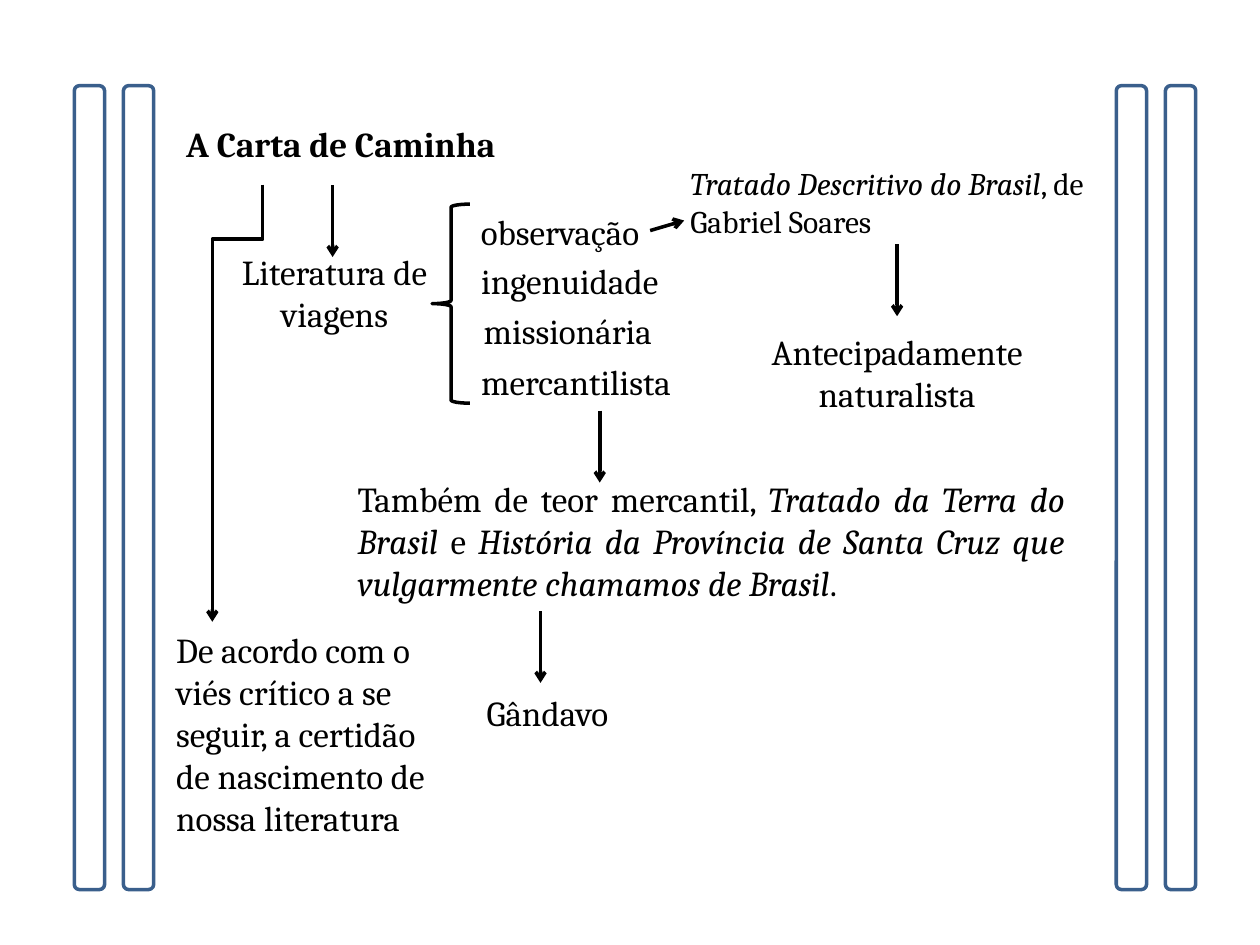
from dataclasses import dataclass

from lxml.etree import SubElement
from pptx import Presentation
from pptx.dml.color import RGBColor
from pptx.enum.shapes import MSO_CONNECTOR as Link, MSO_SHAPE as Preset
from pptx.enum.text import MSO_AUTO_SIZE as AutoSize, PP_ALIGN as Align
from pptx.oxml.ns import qn
from pptx.util import Pt

PX = 9144  # 100 px to the inch


@dataclass(frozen=True)
class Theme:
    font: str = "Cambria"
    ink: RGBColor = RGBColor(0, 0, 0)
    paper: RGBColor = RGBColor(255, 255, 255)
    pillar: RGBColor = RGBColor(0x3A, 0x5F, 0x8C)
    body: int = 20
    small: int = 18
    stroke: int = 2


class Diagram:
    def __init__(self, page, theme):
        self.shapes = page.shapes
        self.theme = theme

    def text(self, left, top, width, height, *spans, align=Align.LEFT,
             size=None, bold=False, wrap=True):
        """Add one paragraph; every second span is italic."""
        box = self.shapes.add_textbox(left * PX, top * PX, width * PX, height * PX)
        frame = box.text_frame
        frame.word_wrap = wrap
        frame.auto_size = AutoSize.SHAPE_TO_FIT_TEXT
        para = frame.paragraphs[0]
        para.alignment = align
        para.font.name = self.theme.font
        para.font.size = Pt(size or self.theme.body)
        para.font.color.rgb = self.theme.ink
        para.font.bold = bold
        for index, words in enumerate(spans):
            if words:
                span = para.add_run()
                span.text = words
                span.font.italic = index % 2 == 1

    def shape(self, preset, left, top, width, height, color, fill=None):
        shape = self.shapes.add_shape(preset, left * PX, top * PX, width * PX, height * PX)
        shape.shadow.inherit = False
        if fill is None:
            shape.fill.background()
        else:
            shape.fill.solid()
            shape.fill.fore_color.rgb = fill
        shape.line.color.rgb = color
        shape.line.width = Pt(self.theme.stroke)

    def arrow(self, x1, y1, x2, y2, kind=Link.STRAIGHT):
        link = self.shapes.add_connector(kind, x1 * PX, y1 * PX, x2 * PX, y2 * PX)
        link.line.color.rgb = self.theme.ink
        link.line.width = Pt(self.theme.stroke)
        properties = link._element.spPr
        SubElement(properties.find(qn("a:ln")), qn("a:tailEnd"), type="arrow")
        SubElement(properties, qn("a:effectLst"))
        return link

    def down_arrow(self, x, top, length=57):
        self.arrow(x, top, x, top + length)

    def elbow_down(self, x1, y1, x2, y2, bend):
        """Go down, left and down again; bend is the share of the first leg."""
        # Lay the connector on its side about its centre, then turn it a quarter
        run, drop = y2 - y1, x1 - x2
        left, top = (x1 + x2 - run) // 2, (y1 + y2 - drop) // 2
        link = self.arrow(left, top, left + run, top + drop, Link.ELBOW)
        properties = link._element.spPr
        properties.find(qn("a:xfrm")).set("rot", "5400000")
        geometry = properties.find(qn("a:prstGeom"))
        guides = geometry.find(qn("a:avLst"))
        if guides is None:
            guides = SubElement(geometry, qn("a:avLst"))
        SubElement(guides, qn("a:gd"), name="adj1", fmla=f"val {round(bend * 100000)}")


def main():
    deck = Presentation()
    deck.slide_width, deck.slide_height = 1000 * PX, 750 * PX
    page = deck.slides.add_slide(deck.slide_layouts[6])
    theme = Theme()
    diagram = Diagram(page, theme)

    # Pairs of pillars at both sides
    for pair_left in (59, 886):
        for offset in (0, 39):
            diagram.shape(Preset.ROUNDED_RECTANGLE, pair_left + offset, 68, 24, 638,
                          theme.pillar, theme.paper)

    # Title and its two branches
    diagram.text(138, 92, 307, 44, "A Carta de Caminha", bold=True, wrap=False)
    diagram.elbow_down(209, 147, 169, 494, bend=0.125)
    diagram.text(130, 494, 220, 212, "De acordo com o viés crítico a se seguir, "
                 "a certidão de nascimento de nossa literatura")
    diagram.down_arrow(264, 147)
    diagram.text(169, 194, 193, 77, "Literatura de viagens", align=Align.CENTER)

    # Traits of travel literature
    diagram.shape(Preset.LEFT_BRACE, 343, 162, 30, 158, theme.ink)
    traits = [
        ("observação", 356, 177, Align.CENTER),
        ("ingenuidade", 372, 181, Align.JUSTIFY),
        ("missionária", 374, 179, Align.LEFT),
        ("mercantilista", 372, 207, Align.JUSTIFY),
    ]
    for row, (trait, left, width, align) in enumerate(traits):
        diagram.text(left, 162 + row * 119 // 3, width, 44, trait, align=align)

    # Mercantile works and their author
    diagram.down_arrow(476, 326)
    diagram.text(274, 374, 581, 111, "Também de teor mercantil, ",
                 "Tratado da Terra do Brasil ", "e ",
                 "História da Província de Santa Cruz que vulgarmente chamamos de Brasil",
                 ".", align=Align.JUSTIFY)
    diagram.down_arrow(429, 485)
    diagram.text(353, 544, 163, 44, "Gândavo", align=Align.CENTER)

    # Observation and the naturalist treatise
    diagram.arrow(516, 183, 543, 175)
    diagram.text(538, 125, 348, 71, "", "Tratado Descritivo do Brasil",
                 ", de Gabriel Soares", size=theme.small)
    diagram.down_arrow(712, 194)
    diagram.text(594, 257, 236, 77, "Antecipadamente naturalista", align=Align.CENTER)

    deck.save("out.pptx")


if __name__ == "__main__":
    main()
